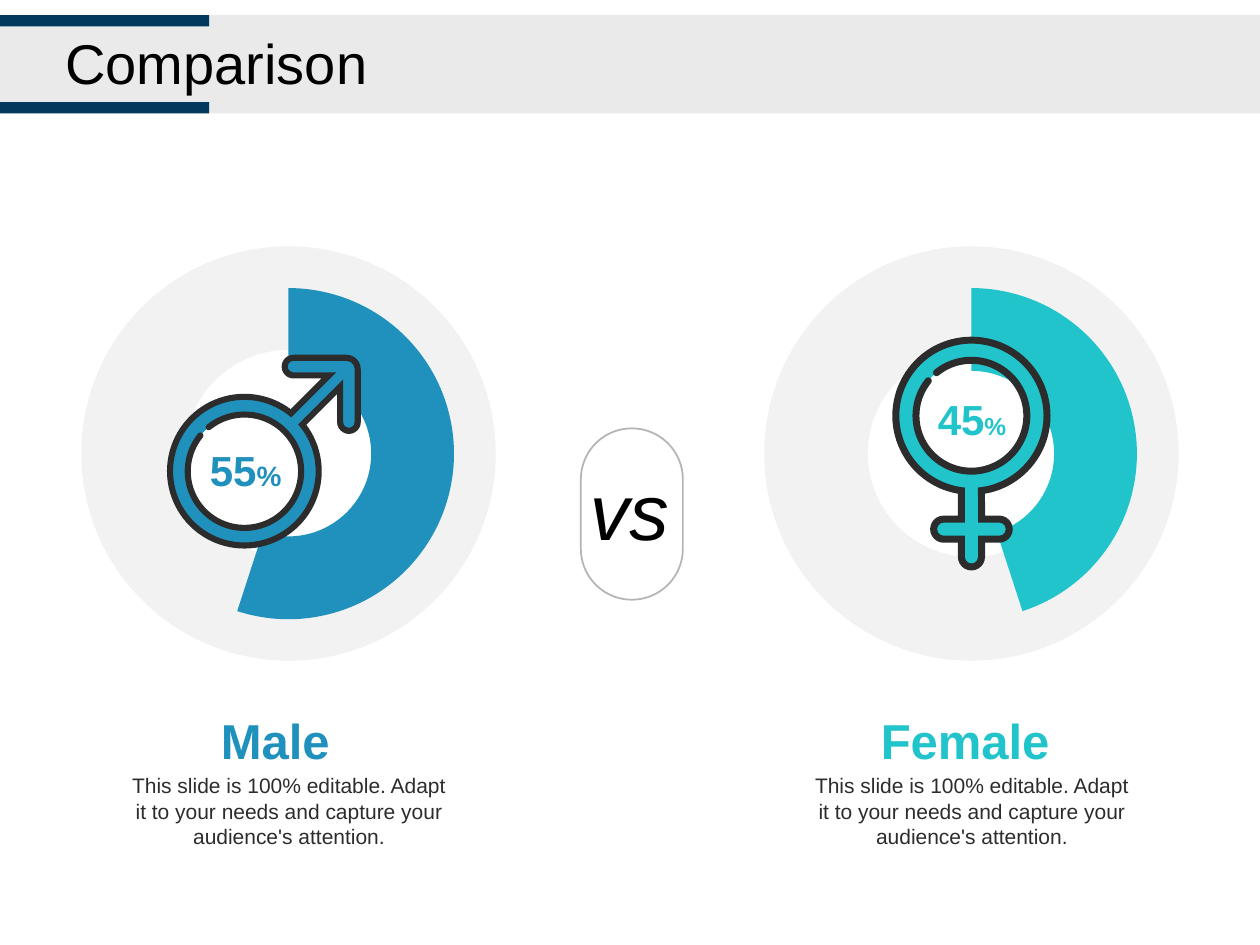
from math import acos, asin, cos, degrees, radians, sin, sqrt

from pptx import Presentation
from pptx.chart.data import CategoryChartData
from pptx.dml.color import RGBColor
from pptx.enum.chart import XL_CHART_TYPE as CHART
from pptx.enum.shapes import MSO_SHAPE as SHAPE
from pptx.enum.text import MSO_ANCHOR as ANCHOR, PP_ALIGN as ALIGN
from pptx.oxml import parse_xml
from pptx.oxml.ns import nsdecls, qn
from pptx.util import Inches, Pt

FONT = "Arial"
BLUE, TEAL, DARK, NAVY = "2091BC", "22C4CB", "2C2C2C", "03395D"
rgb = RGBColor.from_string


def add_text(box, *runs, color="000000", bold=False, italic=False,
             align=ALIGN.CENTER, wrap=True):
    """Add a one-paragraph text box; runs are (text, size) pairs."""
    tf = s.shapes.add_textbox(*map(Inches, box)).text_frame
    tf.word_wrap = wrap
    tf.vertical_anchor = ANCHOR.MIDDLE
    p = tf.paragraphs[0]
    p.alignment = align
    for text, size in runs:
        r = p.add_run()
        r.text = text
        r.font.name, r.font.size = FONT, Pt(size)
        r.font.bold, r.font.italic = bold, italic
        r.font.color.rgb = rgb(color)


def add_outline(cx, cy, color, *contours):
    """Fill closed contours made of (x, y) points and
    (x, y, radius, start, end) arcs, relative to the centre (cx, cy)."""
    fb, segments = None, []
    for contour in contours:
        pts, arcs = [], []
        for x, y, *arc in contour:
            radius, start, end = arc or (0, 0, 0)
            # Cut at the quadrants, so that the corners span the whole shape
            cuts = [a for a in range(-90, 811, 90)
                    if min(start, end) < a < max(start, end)]
            angles = [start, *sorted(cuts, reverse=end < start)]
            if arc:
                angles.append(end)
            for i, a in enumerate(angles):
                pts.append((Inches(cx + x + radius * cos(radians(a))),
                            Inches(cy + y + radius * sin(radians(a)))))
                arcs.append((radius, angles[i - 1], a) if i else None)
        if fb is None:
            fb = s.shapes.build_freeform(*pts[0], scale=1.0)
        else:
            fb.move_to(*pts[0])
        fb.add_line_segments(pts[1:], close=True)
        segments += arcs[1:]
    sp = fb.convert_to_shape()
    for line, arc in zip(list(sp.element.iter(qn("a:lnTo"))), segments):
        if arc:
            radius, start, end = arc
            line.getparent().replace(line, parse_xml(
                f'<a:arcTo {nsdecls("a")} wR="{Inches(radius)}" '
                f'hR="{Inches(radius)}" stAng="{round(start % 360 * 60000)}" '
                f'swAng="{round((end - start) * 60000)}"/>'))
    sp.shadow.inherit = False
    sp.fill.solid()
    sp.fill.fore_color.rgb = rgb(color)
    sp.line.fill.background()


prs = Presentation()
prs.slide_width, prs.slide_height = Inches(10), Inches(7.5)
s = prs.slides.add_slide(prs.slide_layouts[6])

# Header
for x, y, w, h, color in [(0, 0.12, 10, 0.78, "EAEAEA"),
                          (0, 0.12, 1.66, 0.09, NAVY),
                          (0, 0.81, 1.66, 0.09, NAVY)]:
    sp = s.shapes.add_shape(SHAPE.RECTANGLE, *map(Inches, (x, y, w, h)))
    sp.shadow.inherit = False
    sp.fill.solid()
    sp.fill.fore_color.rgb = rgb(color)
    sp.line.fill.background()
add_text((0.42, 0.14, 9.15, 0.7), ("Comparison", 32), align=ALIGN.LEFT)

# Doughnuts: a full grey ring behind the coloured share
MIDDLE_Y = 3.6
for cx, share, color in [(2.29, 55, BLUE), (7.71, 45, TEAL)]:
    for w, h, diameter, hole, values, colors in [
            (4.25, 3.57, 3.29, 85, [100], ["F2F2F2"]),
            (3.46, 2.9, 2.63, 81, [share, 100 - share], [color, None])]:
        data = CategoryChartData()
        data.categories = [str(i + 1) for i in range(len(values))]
        data.add_series("Series 1", values)
        chart = s.shapes.add_chart(
            CHART.DOUGHNUT, Inches(cx - w / 2), Inches(MIDDLE_Y - h / 2),
            Inches(w), Inches(h), data).chart
        chart.has_legend = chart.has_title = False
        chart.font.name, chart.font.size = FONT, Pt(10)
        chart.font.color.rgb = rgb("000000")
        plot = chart.plots[0]
        plot.vary_by_categories = False
        for i, fill_color in enumerate(colors):
            fmt = plot.series[0].points[i].format
            fmt.line.fill.background()
            if fill_color:
                fmt.fill.solid()
                fmt.fill.fore_color.rgb = rgb(fill_color)
            else:
                fmt.fill.background()

        root = chart.element
        next(root.iter(qn("c:holeSize"))).set("val", str(hole))
        root.find(qn("c:chart")).addnext(parse_xml(
            f'<c:spPr {nsdecls("c", "a")}><a:noFill/>'
            '<a:ln><a:noFill/></a:ln></c:spPr>'))
        area = next(root.iter(qn("c:plotArea")))
        for old in area.findall(qn("c:layout")):
            area.remove(old)
        fw, fh = diameter / w, diameter / h
        area.insert(0, parse_xml(
            f'<c:layout {nsdecls("c")}><c:manualLayout>'
            '<c:layoutTarget val="inner"/>'
            '<c:xMode val="edge"/><c:yMode val="edge"/>'
            f'<c:x val="{(1 - fw) / 2:.3f}"/><c:y val="{(1 - fh) / 2:.3f}"/>'
            f'<c:w val="{fw:.3f}"/><c:h val="{fh:.3f}"/>'
            '</c:manualLayout></c:layout>'))

# Symbols: a coloured body, a dark stroke along its edge and round its hole
for kind, cx, cy, color, radius, hole, stroke in [
        ("male", 1.94, 3.74, BLUE, 0.59, 0.45, 3.5),
        ("female", 7.71, 3.3, TEAL, 0.6, 0.44, 4)]:
    half = stroke / 72 / 2
    edges = []
    for grow in (0, half, -half):
        ring = radius + grow
        if kind == "male":
            w = 0.07 + grow
            stem = 0.09 + grow * sqrt(2)
            a = degrees(asin(stem / sqrt(2) / ring))
            edges.append([(0, 0, ring, a - 45, 315 - a),
                          (0.83 - w - stem, w - 0.83),
                          (0.39, -0.83, w, 90, 270),
                          (0.81, -0.81, 0.09 + grow, -90, 0),
                          (0.83, -0.39, w, 0, 180),
                          (0.83 - w, w + stem - 0.83)])
        else:
            w = 0.08 + grow
            a = degrees(acos(w / ring))
            edges.append([(0, 0, ring, 180 - a, 360 + a),
                          (w, 0.9 - w), (0.22, 0.9, w, -90, 90), (w, 0.9 + w),
                          (0, 1.12, w, 0, 180),
                          (-w, 0.9 + w), (-0.22, 0.9, w, 90, 270),
                          (-w, 0.9 - w)])
    body, outer, inner = edges
    start, end = 231, 579
    tips = [(hole * cos(radians(a)), hole * sin(radians(a)))
            for a in (start, end)]
    add_outline(cx, cy, color, body, [(0, 0, hole, 360, 0)])
    add_outline(cx, cy, DARK, outer, inner)
    add_outline(cx, cy, DARK, [(0, 0, hole + half, start, end),
                               (*tips[1], half, end, end + 180),
                               (0, 0, hole - half, end, start),
                               (*tips[0], half, start + 180, start + 360)])

# Captions
for name, color, name_box, note_x, share, share_box, sign_size in [
        ("Male", BLUE, (1.29, 5.59, 1.79, 0.57), 0.91,
         "55", (1.38, 3.48, 1.14, 0.5), 16),
        ("Female", TEAL, (6.56, 5.59, 2.2, 0.57), 6.33,
         "45", (7.18, 3.07, 1.07, 0.5), 14)]:
    add_text((note_x, 6.08, 2.77, 0.71),
             ("This slide is 100% editable. Adapt it to your needs and "
              "capture your audience's attention.", 12), color=DARK)
    add_text(name_box, (name, 28), color=color, bold=True)
    add_text(share_box, (share, 24), ("%", sign_size), color=color, bold=True)

# Versus badge
sp = s.shapes.add_shape(SHAPE.ROUNDED_RECTANGLE, Inches(4.61), Inches(3.4),
                        Inches(0.81), Inches(1.36))
sp.adjustments[0] = 0.5
sp.shadow.inherit = False
sp.fill.solid()
sp.fill.fore_color.rgb = rgb("FFFFFF")
sp.line.color.rgb = rgb("B4B4B4")
sp.line.width = Pt(1)
add_text((4.58, 3.61, 0.83, 0.86), ("vs", 45), italic=True, wrap=False)

prs.save("out.pptx")
